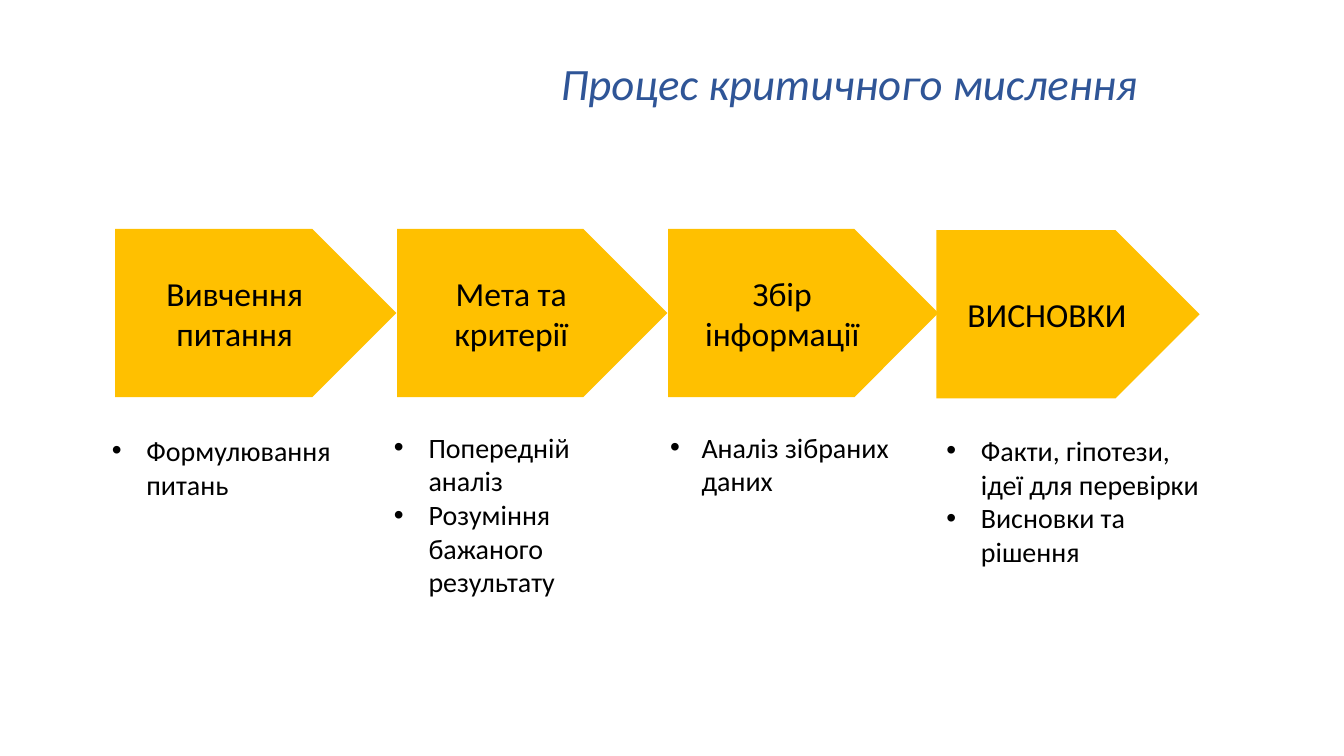
from dataclasses import dataclass

from lxml.etree import SubElement
from pptx import Presentation
from pptx.dml.color import RGBColor as Rgb
from pptx.enum.shapes import MSO_SHAPE as Shape
from pptx.enum.text import MSO_ANCHOR as Anchor, MSO_AUTO_SIZE as Fit, PP_ALIGN as Align
from pptx.oxml.ns import qn
from pptx.util import Cm, Pt


@dataclass(frozen=True)
class Theme:
    face: str = "Calibri"
    ink: Rgb = Rgb(0, 0, 0)
    blue: Rgb = Rgb(0x2F, 0x55, 0x97)
    gold: Rgb = Rgb(0xFF, 0xC0, 0x00)
    title: int = 32
    step: int = 24
    note: int = 20


THEME = Theme()

# Each step: label, arrow (left, top, width), notes box (left, top, width, height), indent, notes
STEPS = [
    ("Вивчення питання", (2.9, 5.77, 7.09), (2.57, 10.8, 6.6, 1.96), 0.87,
     ["Формулювання питань"]),
    ("Мета та критерії", (10.01, 5.77, 6.81), (9.68, 10.72, 5.89, 4.52), 0.87,
     ["Попередній аналіз", "Розуміння бажаного результату"]),
    ("Збір інформації", (16.84, 5.77, 6.81), (16.64, 10.72, 6.76, 4.52), 0.79,
     ["Аналіз зібраних даних"]),
    ("ВИСНОВКИ", (23.6, 5.8, 6.63), (23.6, 10.8, 7.29, 3.68), 0.87,
     ["Факти, гіпотези, ідеї для перевірки", "Висновки та рішення"]),
]
DEPTH = 4.24


def style(para, size, color=THEME.ink):
    font = para.font
    font.name, font.size = THEME.face, Pt(size)
    font.color.rgb = color


def add_box(slide, *area):
    frame = slide.shapes.add_textbox(*map(Cm, area)).text_frame
    frame.word_wrap = True
    return frame


def add_title(slide, text):
    frame = add_box(slide, 10.46, 0.33, 21.89, 3.68)
    frame.vertical_anchor = Anchor.MIDDLE
    para = frame.paragraphs[0]
    para.text = text
    para.alignment, para.line_spacing = Align.CENTER, 0.9
    style(para, THEME.title, THEME.blue)
    para.font.italic = True


def add_arrow(slide, text, left, top, width):
    arrow = slide.shapes.add_shape(
        Shape.PENTAGON, Cm(left), Cm(top), Cm(width), Cm(DEPTH))
    arrow.shadow.inherit = False
    arrow.fill.solid()
    arrow.fill.fore_color.rgb = THEME.gold
    arrow.line.fill.background()
    frame = arrow.text_frame
    frame.word_wrap = True
    frame.vertical_anchor = Anchor.MIDDLE
    para = frame.paragraphs[0]
    para.text = text
    para.alignment = Align.CENTER
    style(para, THEME.step)


def add_bullet(para, indent):
    """Give the paragraph a round bullet with a hanging indent."""
    props = para._p.get_or_add_pPr()
    props.set("marL", str(Cm(indent)))
    props.set("indent", str(-Cm(indent)))
    SubElement(props, qn("a:buFont"), typeface="Arial")
    SubElement(props, qn("a:buChar"), char="•")


def add_notes(slide, area, indent, notes):
    frame = add_box(slide, *area)
    frame.auto_size = Fit.SHAPE_TO_FIT_TEXT
    frame.text = "\n".join(notes)
    for para in frame.paragraphs:
        add_bullet(para, indent)
        style(para, THEME.note)


def main():
    deck = Presentation()
    deck.slide_width, deck.slide_height = Cm(33.87), Cm(19.05)
    slide = deck.slides.add_slide(deck.slide_layouts[6])
    add_title(slide, "Процес критичного мислення")
    for label, place, area, indent, notes in STEPS:
        add_arrow(slide, label, *place)
        add_notes(slide, area, indent, notes)
    deck.save("out.pptx")


if __name__ == "__main__":
    main()
